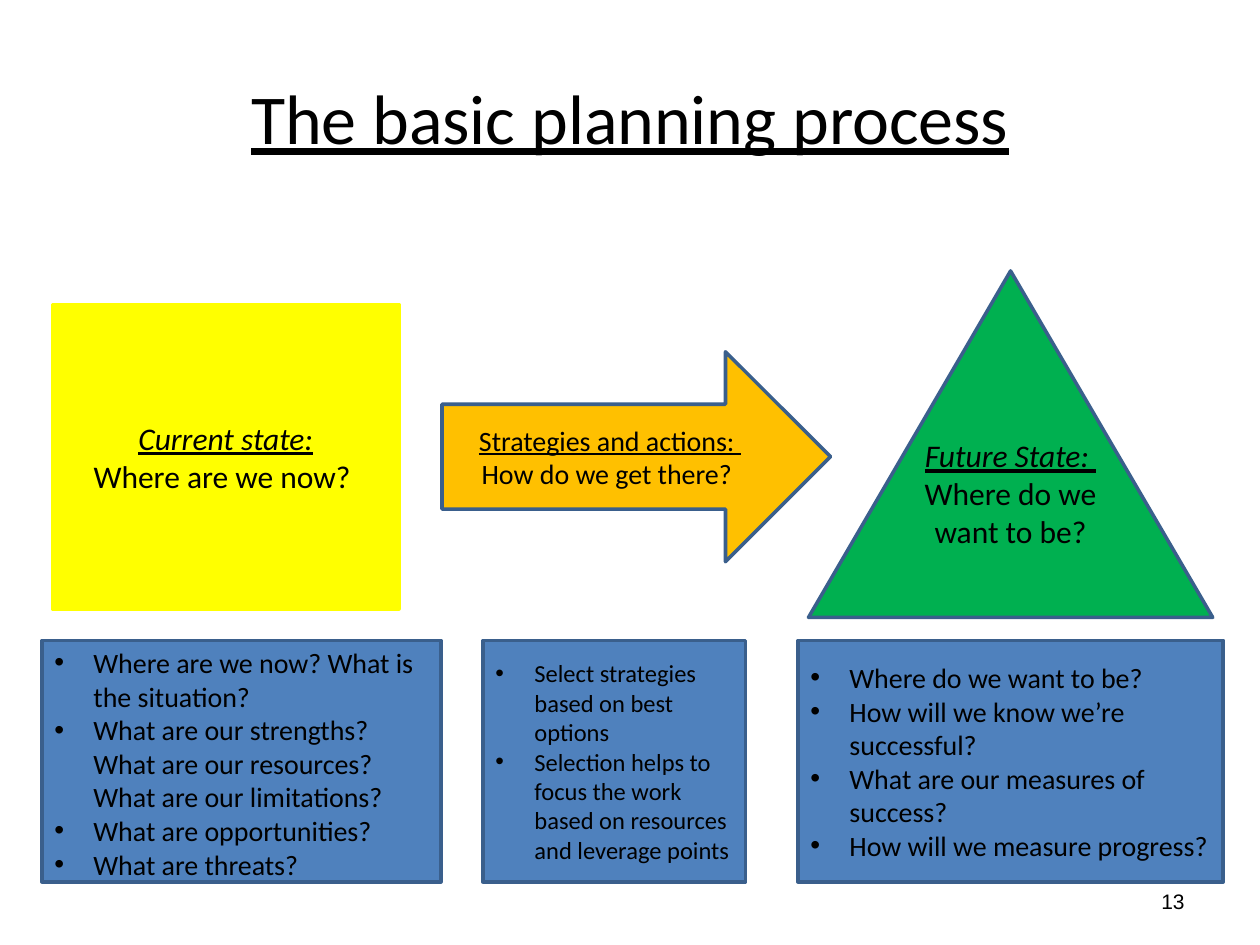
"""Build the slide on the basic planning process."""
from lxml.etree import SubElement
from pptx import Presentation
from pptx.dml.color import RGBColor
from pptx.enum.shapes import MSO_SHAPE
from pptx.enum.text import MSO_ANCHOR, PP_ALIGN
from pptx.oxml.ns import qn
from pptx.util import Inches, Pt

deck = Presentation()
deck.slide_width, deck.slide_height = Inches(10), Inches(7.5)
slide = deck.slides.add_slide(deck.slide_layouts[5])
UNIT = deck.slide_width / 120


def color(hex_value):
    return RGBColor.from_string(hex_value)


def write(frame, lines, size, align, font="Calibri", bulleted=False):
    frame.word_wrap = True
    frame.vertical_anchor = MSO_ANCHOR.MIDDLE
    for index, (words, emphasis) in enumerate(lines):
        paragraph = frame.paragraphs[0] if index == 0 else frame.add_paragraph()
        paragraph.alignment = align
        run = paragraph.add_run()
        run.text = words
        look = {"name": font, "size": Pt(size), **emphasis}
        for attribute, value in look.items():
            setattr(run.font, attribute, value)
        run.font.color.rgb = color("000000")
        if bulleted:
            properties = paragraph._p.get_or_add_pPr()
            properties.set("marL", str(Inches(0.31)))
            properties.set("indent", str(-Inches(0.31)))
            SubElement(properties, qn("a:buFont"), typeface="Arial")
            SubElement(properties, qn("a:buChar"), char="•")


UNDERLINED = {"underline": True}
HEADING = {"underline": True, "italic": True}
BLUE, EDGE = "4F81BD", "3A5F8C"
LIST_TOP, LIST_HEIGHT = 61, 23

title = slide.shapes.title
title_place = {"left": 6, "top": 3.6, "width": 108, "height": 15}
for side, units in title_place.items():
    setattr(title, side, round(units * UNIT))
write(title.text_frame, [("The basic planning process", UNDERLINED)], 40, PP_ALIGN.CENTER)

page_number = slide.shapes.add_textbox(*(round(n * UNIT) for n in (86, 83.4, 28, 4.8)))
write(page_number.text_frame, [("13", {})], 12, PP_ALIGN.RIGHT, font="Arial")

stages = [
    (MSO_SHAPE.ISOSCELES_TRIANGLE, (77, 25.8, 38.5, 33), "00B050", EDGE, 18,
     [("Future State: ", HEADING), ("Where do we want to be?", {})],
     {"margin_bottom": Inches(0.65)}),
    (MSO_SHAPE.RECTANGLE, (5, 29, 33, 29), "FFFF00", "FFFF00", 18,
     [("Current state:", HEADING), ("Where are we now? ", {})], {}),
    (MSO_SHAPE.RIGHT_ARROW, (42.1, 33.5, 37, 20), "FFC000", EDGE, 16,
     [("Strategies and actions: ", UNDERLINED), ("How do we get there? ", {})], {}),
]
questions = [
    (4, 38, 16, [
        "Where are we now? What is the situation?",
        "What are our strengths? What are our resources? What are our limitations?",
        "What are opportunities?",
        "What are threats?",
    ], {"margin_top": Inches(0.08)}),
    (46, 25, 14, [
        "Select strategies based on best options",
        "Selection helps to focus the work based on resources and leverage points",
    ], {}),
    (76, 40.5, 16, [
        "Where do we want to be?",
        "How will we know we’re successful?",
        "What are our measures of success?",
        "How will we measure progress?",
    ], {}),
]
panels = [(*stage, PP_ALIGN.CENTER, False) for stage in stages]
panels += [
    (MSO_SHAPE.RECTANGLE, (left, LIST_TOP, width, LIST_HEIGHT), BLUE, EDGE, size,
     [(item, {}) for item in items], margins, PP_ALIGN.LEFT, True)
    for left, width, size, items, margins in questions
]

for outline, place, fill, edge, size, lines, margins, align, bulleted in panels:
    panel = slide.shapes.add_shape(outline, *(round(n * UNIT) for n in place))
    panel.shadow.inherit = False
    panel.fill.solid()
    panel.fill.fore_color.rgb = color(fill)
    panel.line.color.rgb = color(edge)
    panel.line.width = Pt(2)
    for attribute, value in margins.items():
        setattr(panel.text_frame, attribute, value)
    write(panel.text_frame, lines, size, align, bulleted=bulleted)

deck.save("out.pptx")
